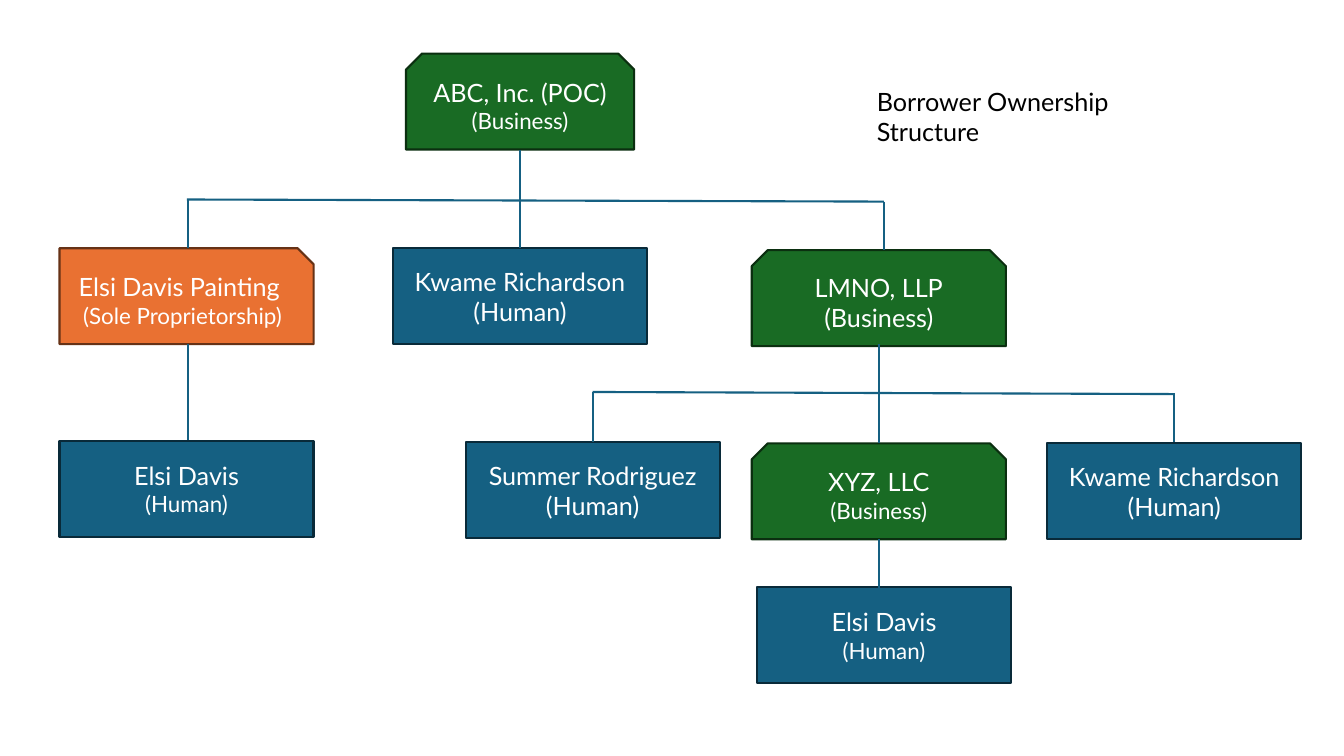
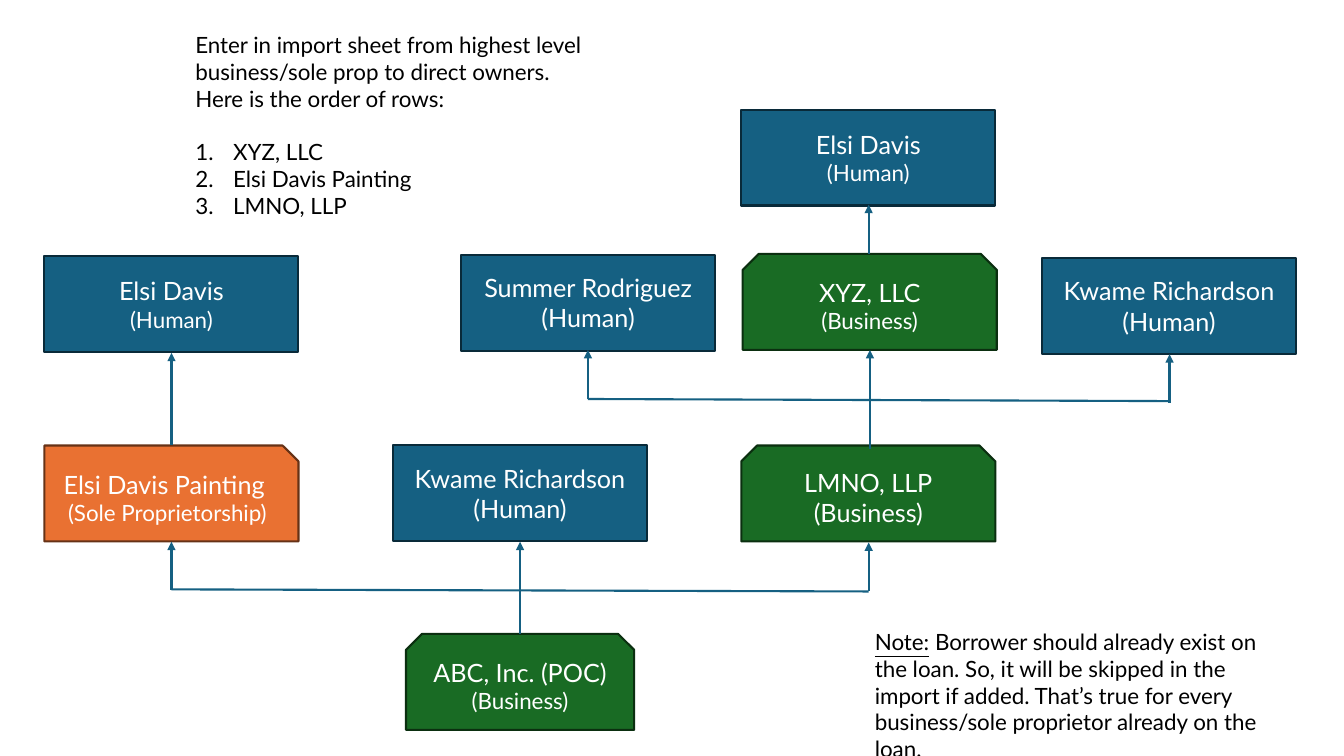
from pptx import Presentation
from pptx.dml.color import RGBColor
from pptx.enum import shapes, text
from pptx.util import Pt
from lxml import etree

SNIP1 = shapes.MSO_SHAPE.SNIP_1_RECTANGLE
SNIP2 = shapes.MSO_SHAPE.SNIP_2_SAME_RECTANGLE
RECT = shapes.MSO_SHAPE.RECTANGLE


class Theme:
    font = "Lato"
    big, small = 18, 16
    light, dark, link = "FFFFFF", "000000", "156082"
    rule = 1.5
    wide, high = 181.5, 68.5
    # kind: (preset, fill, outline)
    kinds = {
        "human": (RECT, "156082", "092A39"),
        "sole": (SNIP1, "E97132", "663216"),
        "firm": (SNIP2, "196B24", "0B2F10"),
    }


# key: (kind, paragraphs as (words, size))
OWNERS = {
    "elsi": ("human", [("Elsi Davis", Theme.big), ("(Human)", Theme.small)]),
    "paint": ("sole", [("Elsi Davis Painting ", Theme.big),
                       ("(Sole Proprietorship)", Theme.small)]),
    "abc": ("firm", [("ABC, Inc. (POC)", Theme.big), ("(Business)", Theme.small)]),
    "xyz": ("firm", [("XYZ, LLC", Theme.big), ("(Business)", Theme.small)]),
    "lmno": ("firm", [("LMNO, LLP", Theme.big), ("(Business)", Theme.big)]),
    "summer": ("human", [("Summer Rodriguez", Theme.big), ("(Human)", Theme.big)]),
    "kwame": ("human", [("Kwame Richardson (Human)", Theme.big)]),
}
WIDTHS = {"abc": 163}

# boxes: (owner, left, top); drops: (x, top, bottom);
# rails: (left, top, right, bottom); notes: (left, top, width, height, paragraphs)
# note paragraph: (runs as (words, underlined), size, numbered, space before)
CHARTS = [
    {
        "arrows": False,
        "boxes": [("elsi", 540.7, 419.5), ("paint", 42.5, 177.3),
                  ("abc", 290, 38.3), ("xyz", 537, 316.7),
                  ("lmno", 537, 178.7), ("summer", 332.6, 315.8),
                  ("kwame", 748, 316.5), ("kwame", 280.7, 177.3),
                  ("elsi", 42.5, 314.8)],
        "drops": [(371.5, 107, 177), (134.4, 142.5, 177), (631.4, 144, 178.5),
                  (134.4, 246, 314.5), (627.8, 246, 316.5), (423.4, 280, 315.5),
                  (838.8, 281, 316), (627.8, 385, 420)],
        "rails": [(133.5, 142.5, 631.4, 144), (423.4, 280, 838.8, 281.5)],
        "notes": [(619.2, 58.3, 250, 50,
                   [([("Borrower Ownership Structure", False)],
                     Theme.big, False, 0)])],
    },
    {
        "arrows": True,
        "boxes": [("elsi", 529.5, 78.3), ("paint", 31.7, 318.2),
                  ("abc", 290, 452.8), ("xyz", 530.5, 181.4),
                  ("lmno", 529.5, 318.2), ("summer", 329.4, 182),
                  ("kwame", 744.3, 184.3), ("kwame", 280.7, 318),
                  ("elsi", 31.7, 183)],
        "drops": [(371.5, 387, 453), (122.5, 387, 421.5), (620.5, 387.5, 422.5),
                  (122.5, 252, 318), (621.4, 250, 321), (420, 250, 285),
                  (835.4, 253, 288), (620.5, 146.3, 181.4)],
        "rails": [(122.5, 421, 620.5, 422.5), (420, 285, 835.4, 286.5)],
        "notes": [
            (132.5, 18.7, 296, 194, [
                ([("Enter in import sheet from highest level business/sole prop "
                   "to direct owners. Here is the order of rows:", False)],
                 Theme.small, False, 0),
                ([("XYZ, LLC", False)], Theme.small, True, 19.2),
                ([("Elsi Davis Painting", False)], Theme.small, True, 0),
                ([("LMNO, LLP", False)], Theme.small, True, 0)]),
            (617.8, 445, 308, 103, [
                ([("Note:", True),
                  (" Borrower should already exist on the loan. So, it will be "
                   "skipped in the import if added. That’s true for every "
                   "business/sole proprietor already on the loan.", False)],
                 Theme.small, False, 0)]),
        ],
    },
]


def rgb(code):
    return RGBColor.from_string(code)


def tag(parent, name, **attrs):
    """Append a DrawingML element."""
    space = "http://schemas.openxmlformats.org/drawingml/2006/main"
    return etree.SubElement(parent, "{%s}%s" % (space, name), attrs)


def write(para, words, size, color, line=False):
    run = para.add_run()
    run.text = words
    run.font.name = Theme.font
    run.font.size = Pt(size)
    run.font.color.rgb = rgb(color)
    if line:
        run.font.underline = True


def paras(frame, items):
    """Pair each item with a paragraph, using the first one already there."""
    for i, item in enumerate(items):
        yield (frame.add_paragraph() if i else frame.paragraphs[0]), item


def add_box(slide, owner, left, top):
    kind, lines = OWNERS[owner]
    preset, fill, edge = Theme.kinds[kind]
    width = WIDTHS.get(owner, Theme.wide)
    box = slide.shapes.add_shape(preset, Pt(left), Pt(top), Pt(width), Pt(Theme.high))
    box.shadow.inherit = False
    box.fill.solid()
    box.fill.fore_color.rgb = rgb(fill)
    box.line.color.rgb = rgb(edge)
    box.line.width = Pt(Theme.rule)
    frame = box.text_frame
    frame.word_wrap = True
    frame.vertical_anchor = text.MSO_ANCHOR.MIDDLE
    for para, (words, size) in paras(frame, lines):
        para.alignment = text.PP_ALIGN.CENTER
        write(para, words, size, Theme.light)


def add_line(slide, ends, arrow=False):
    """Draw a line, with an arrowhead at its first end if asked."""
    line = slide.shapes.add_connector(shapes.MSO_CONNECTOR.STRAIGHT, *map(Pt, ends))
    line.line.color.rgb = rgb(Theme.link)
    line.line.width = Pt(Theme.rule)
    if arrow:
        tag(line.line._get_or_add_ln(), "headEnd", type="triangle")
    tag(line._element.spPr, "effectLst")


def add_note(slide, left, top, width, height, lines):
    box = slide.shapes.add_textbox(Pt(left), Pt(top), Pt(width), Pt(height))
    frame = box.text_frame
    frame.word_wrap = True
    for para, (runs, size, listed, gap) in paras(frame, lines):
        if listed:
            props = para._p.get_or_add_pPr()
            props.set("marL", str(Pt(27)))
            props.set("indent", str(-Pt(27)))
            tag(props, "buFont", typeface="+mj-lt")
            tag(props, "buAutoNum", type="arabicPeriod")
        if gap:
            para.space_before = Pt(gap)
        for words, line in runs:
            write(para, words, size, Theme.dark, line)


def main():
    deck = Presentation()
    deck.slide_width, deck.slide_height = Pt(960), Pt(540)
    for chart in CHARTS:
        slide = deck.slides.add_slide(deck.slide_layouts[6])
        for box in chart["boxes"]:
            add_box(slide, *box)
        for x, top, bottom in chart["drops"]:
            add_line(slide, (x, top, x, bottom), chart["arrows"])
        for rail in chart["rails"]:
            add_line(slide, rail)
        for note in chart["notes"]:
            add_note(slide, *note)
    deck.save("out.pptx")


if __name__ == "__main__":
    main()
